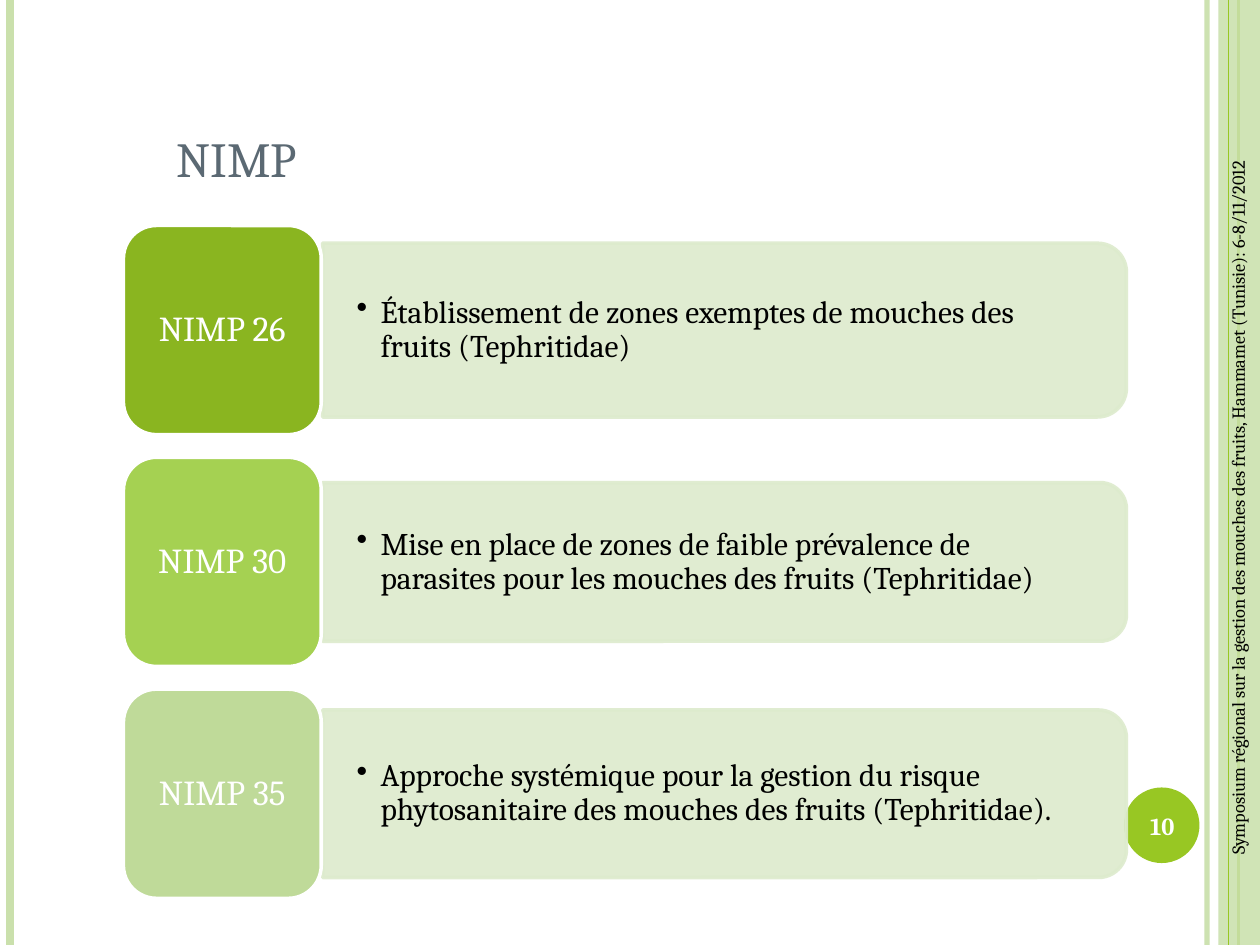
from pptx import Presentation
from pptx.dml.color import RGBColor
from pptx.enum.shapes import MSO_CONNECTOR, MSO_SHAPE
from pptx.enum.text import MSO_ANCHOR, PP_ALIGN
from pptx.oxml.ns import qn
from pptx.util import Inches, Pt
from lxml import etree

RECT, OVAL = MSO_SHAPE.RECTANGLE, MSO_SHAPE.OVAL
ROUND, ROUND_TOP = MSO_SHAPE.ROUNDED_RECTANGLE, MSO_SHAPE.ROUND_2_SAME_RECTANGLE
STRAIGHT = MSO_CONNECTOR.STRAIGHT
LEFT, CENTER = PP_ALIGN.LEFT, PP_ALIGN.CENTER
TOP, MIDDLE, BOTTOM = MSO_ANCHOR.TOP, MSO_ANCHOR.MIDDLE, MSO_ANCHOR.BOTTOM

FONT = "Cambria"
GREEN, PALE, PANEL = "98C723", "CAE0AC", "DDEBCD"
WHITE, BLACK, SLATE = "FFFFFF", "000000", "5B6973"


def rgb(value):
    return RGBColor.from_string(value)


def paint(fill, color, alpha=100):
    """Solid fill with an opacity in percent."""
    fill.solid()
    fill.fore_color.rgb = rgb(color)
    if alpha < 100:
        srgb = fill._xPr.find(qn("a:solidFill")).find(qn("a:srgbClr"))
        etree.SubElement(srgb, qn("a:alpha"), val=str(alpha * 1000))


def write(tf, text, size, color=BLACK, bold=False, align=LEFT, anchor=MIDDLE,
          insets=(0.1, 0.05), spacing=1.0, bullet=False, wrap=True):
    tf.word_wrap = wrap
    tf.vertical_anchor = anchor
    tf.margin_left = tf.margin_right = Inches(insets[0])
    tf.margin_top = tf.margin_bottom = Inches(insets[1])
    p = tf.paragraphs[0]
    p.alignment = align
    p.line_spacing = spacing
    if bullet:
        pPr = p._p.get_or_add_pPr()
        pPr.set("marL", str(Inches(0.19)))
        pPr.set("indent", str(-Inches(0.19)))
        etree.SubElement(pPr, qn("a:buChar"), char="•")
    r = p.add_run()
    r.text = text
    r.font.name = FONT
    r.font.size = Pt(size)
    r.font.bold = bold
    r.font.color.rgb = rgb(color)


class SlideBuilder:
    def __init__(self, s):
        self.s = s

    def title(self, text, x, y, w, h, **style):
        sp = self.s.shapes.title
        sp.left, sp.top, sp.width, sp.height = map(Inches, (x, y, w, h))
        write(sp.text_frame, text, **style)

    def vertical_rule(self, x, color, width, alpha=100):
        line = self.s.shapes.add_connector(
            STRAIGHT, Inches(x), 0, Inches(x), Inches(7.5))
        line.line.width = Pt(width)
        paint(line.line.fill, color, alpha)
        etree.SubElement(line._element.spPr, qn("a:effectLst"))

    def shape(self, kind, x, y, w, h, color, alpha=100, outline=None, rotation=0):
        sp = self.s.shapes.add_shape(kind, *map(Inches, (x, y, w, h)))
        sp.shadow.inherit = False
        sp.rotation = rotation
        paint(sp.fill, color, alpha)
        if outline:
            sp.line.width = Pt(2)
            paint(sp.line.fill, outline, alpha)
        else:
            sp.line.fill.background()
        return sp

    def text(self, text, x, y, w, h, rotation=0, **style):
        sp = self.s.shapes.add_textbox(*map(Inches, (x, y, w, h)))
        sp.rotation = rotation
        write(sp.text_frame, text, **style)

    def standard(self, center, name, description, color, height):
        """One row: a panel with its description and the tile naming it."""
        x, length = 2.56, 6.38
        # The panel is a tall shape turned a quarter, so its ends swap.
        self.shape(ROUND_TOP, x + (length - height) / 2, center - length / 2,
                   height, length, PANEL, alpha=90, outline=PANEL, rotation=90)
        self.text(description, x, center - height / 2, 6.31, height, size=18,
                  insets=(0.27, 0.14), spacing=0.9, bullet=True)
        tile = self.shape(ROUND, 0.98, center - 0.83, 1.57, 1.66, color,
                          outline=WHITE)
        write(tile.text_frame, name, size=20, color=WHITE, align=CENTER,
              insets=(0.08, 0.04), spacing=0.9)


def main():
    prs = Presentation()
    prs.slide_width, prs.slide_height = Inches(10), Inches(7.5)
    b = SlideBuilder(prs.slides.add_slide(prs.slide_layouts[5]))

    b.vertical_rule(9.58, PALE, 3, alpha=93)
    b.vertical_rule(0.08, PALE, 4.5)
    b.vertical_rule(9.83, GREEN, 1.5)
    b.shape(RECT, 9.67, 0, 0.33, 7.5, PALE, alpha=87)
    b.vertical_rule(9.75, GREEN, 0.75)
    b.shape(OVAL, 8.92, 6.25, 0.6, 0.6, GREEN)
    b.text("Symposium régional sur la gestion des mouches des fruits, "
           "Hammamet (Tunisie): 6-8/11/2012", 6.48, 3.89, 6.69, 0.28,
           rotation=270, size=10.5, align=CENTER, anchor=TOP)

    b.title("NIMP", 1.3, 0.29, 8.19, 1.25, size=28, color=SLATE, anchor=BOTTOM)

    standards = [
        ("NIMP 26", "Établissement de zones exemptes de mouches des fruits "
         "(Tephritidae)", "8AB520", 1.38),
        ("NIMP 30", "Mise en place de zones de faible prévalence de parasites "
         "pour les mouches des fruits (Tephritidae)", "A5D152", 1.26),
        ("NIMP 35", "Approche systémique pour la gestion du risque "
         "phytosanitaire des mouches des fruits (Tephritidae).", "BFDA99", 1.33),
    ]
    for i, row in enumerate(standards):
        b.standard(2.62 + 1.84 * i, *row)

    b.text("10", 8.89, 6.27, 0.67, 0.57, size=14, color=WHITE, bold=True,
           align=CENTER)
    prs.save("out.pptx")


if __name__ == "__main__":
    main()
